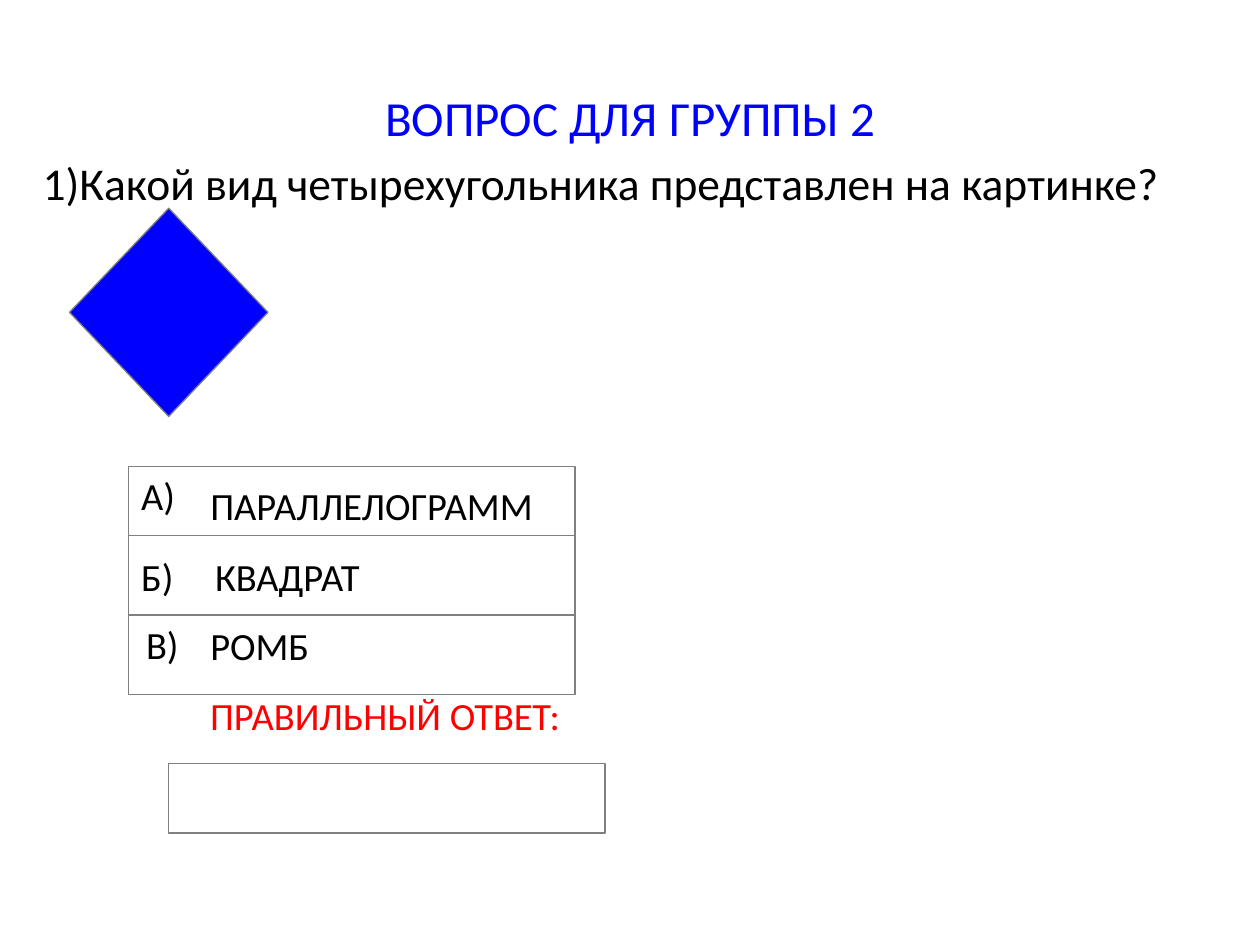
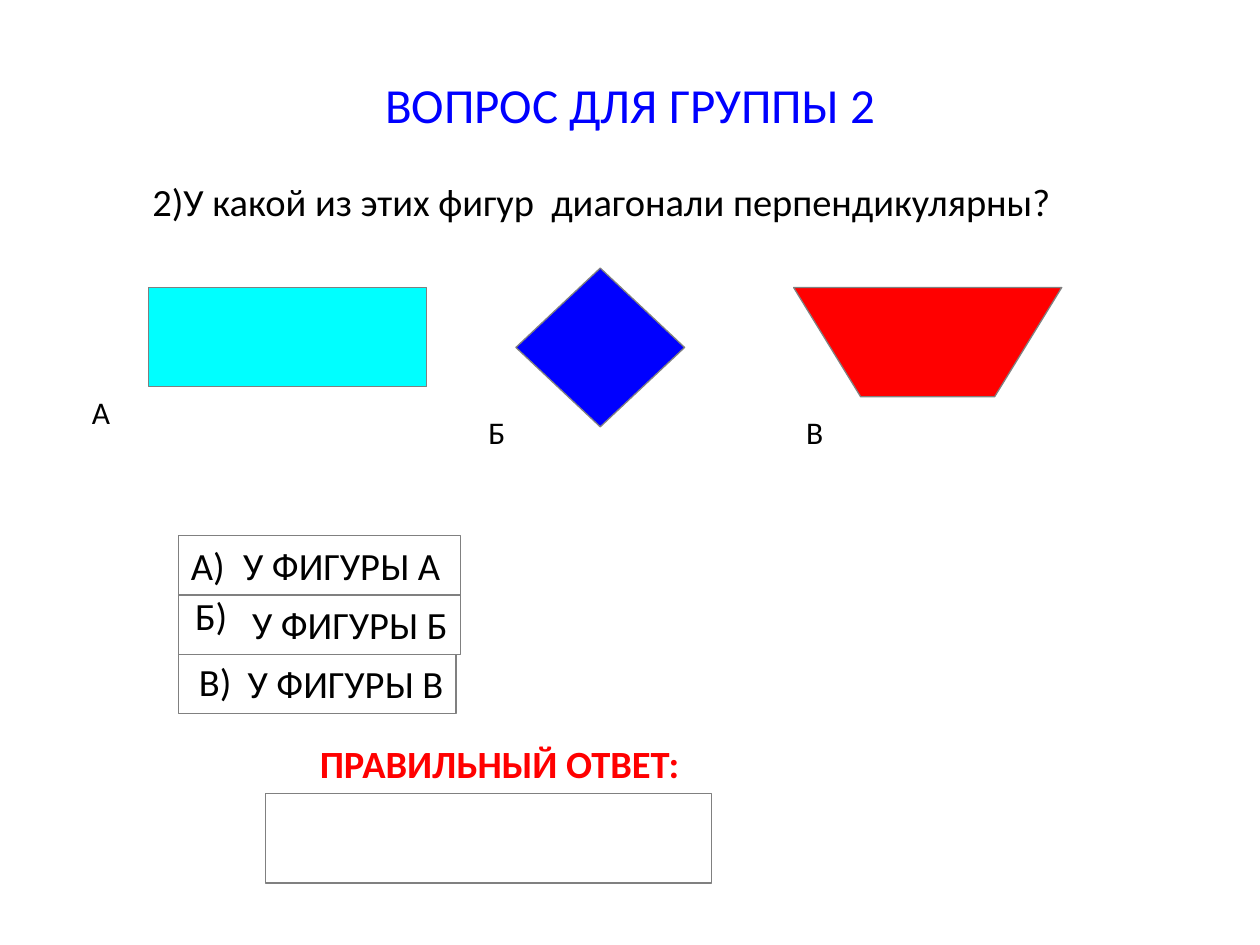
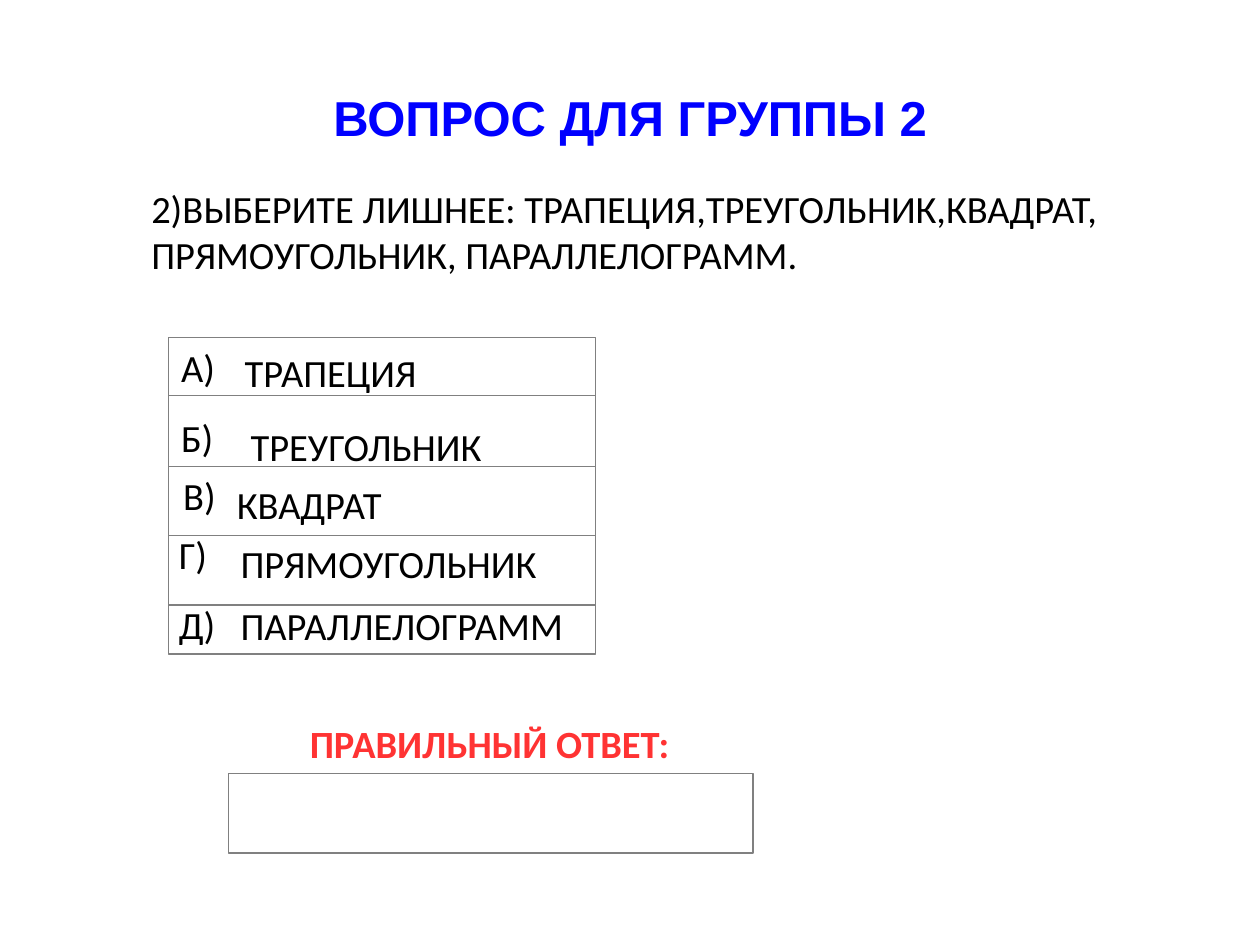
"""Build three quiz slides about quadrilaterals."""
from dataclasses import dataclass

from pptx import Presentation
from pptx.dml.color import RGBColor
from pptx.enum.shapes import MSO_SHAPE
from pptx.enum.text import MSO_ANCHOR, MSO_AUTO_SIZE, PP_ALIGN
from pptx.util import Pt

BLACK, BLUE, CYAN, RED, LIGHT_RED, GREY = (
    "000000", "0000FF", "00FFFF", "FF0000", "FF3333", "808080")
BODY_FONT = "Calibri"
HEADING = "ВОПРОС ДЛЯ ГРУППЫ 2"
ANSWER_CAPTION = "ПРАВИЛЬНЫЙ ОТВЕТ:"
LINE_HEIGHT = 34
LETTER_WIDTH = 38


@dataclass(frozen=True)
class Label:
    text: str
    left: float
    top: float
    width: float
    size: float = 22
    color: str = BLACK
    bold: bool = False
    height: float = LINE_HEIGHT


@dataclass(frozen=True)
class Figure:
    kind: MSO_SHAPE
    left: float
    top: float
    width: float
    height: float
    color: str | None = None


@dataclass(frozen=True)
class Option:
    letter: str
    answer: str
    height: float
    frame_width: float
    letter_offset: tuple[float, float]
    answer_offset: tuple[float, float]
    answer_width: float


@dataclass(frozen=True)
class Question:
    title_height: float
    labels: list[Label]
    figures: list[Figure]
    options_left: float
    options_top: float
    options: list[Option]
    title_font: str = BODY_FONT
    title_bold: bool = False
    trapezoid: Figure | None = None


QUESTIONS = [
    Question(
        title_height=90,
        labels=[
            Label("1)Какой вид четырехугольника представлен на картинке?",
                  17.3, 85, 669, size=26, height=38),
            Label(ANSWER_CAPTION, 113, 391.7, 266.4, color=RED),
        ],
        figures=[
            Figure(MSO_SHAPE.DIAMOND, 39.7, 119, 113.4, 119, BLUE),
            Figure(MSO_SHAPE.RECTANGLE, 96.4, 436.4, 249.4, 39.7),
        ],
        options_left=73.6, options_top=266.4,
        options=[
            Option("А)", "ПАРАЛЛЕЛОГРАММ", 39.6, 255, (0, 0), (39.5, 5.6), 206),
            Option("Б)", "КВАДРАТ", 45.4, 255, (0, 6.5), (42.2, 6.5), 104),
            Option("В)", "РОМБ", 45.4, 255, (2.8, 0), (39.5, 0.5), 76),
        ],
    ),
    Question(
        title_height=75,
        labels=[
            Label("2)У какой из этих фигур  диагонали перпендикулярны?",
                  80, 98, 529),
            Label("А", 45.4, 221, 26, size=18, height=29),
            Label("Б", 272, 232.5, 26, size=18, height=29),
            Label("В", 453.6, 232.5, 26, size=18, height=29),
            Label(ANSWER_CAPTION, 175.7, 419.5, 224, color=RED, bold=True),
        ],
        figures=[
            Figure(MSO_SHAPE.DIAMOND, 294.8, 153.2, 96.4, 90.7, BLUE),
            Figure(MSO_SHAPE.RECTANGLE, 85, 164.3, 158.8, 56.7, CYAN),
            Figure(MSO_SHAPE.RECTANGLE, 151.7, 453.6, 255, 51),
        ],
        trapezoid=Figure(MSO_SHAPE.TRAPEZOID, 453.5, 164.3, 153.2, 62.4, RED),
        options_left=102, options_top=306,
        options=[
            Option("А)", "У ФИГУРЫ А", 34, 161, (0, 0), (29.8, 0), 132),
            Option("Б)", "У ФИГУРЫ Б", 34, 161, (2.4, -5), (34.9, 0), 132),
            Option("В)", "У ФИГУРЫ В", 33.6, 158.6, (4.6, -1.8), (32.4, -0.4), 132),
        ],
    ),
    Question(
        title_height=90, title_font="Arial", title_bold=True,
        labels=[
            Label("2)ВЫБЕРИТЕ ЛИШНЕЕ: ТРАПЕЦИЯ,ТРЕУГОЛЬНИК,КВАДРАТ,\n"
                  "ПРЯМОУГОЛЬНИК, ПАРАЛЛЕЛОГРАММ.", 79.4, 102.2, 568, height=60),
            Label(ANSWER_CAPTION, 170, 408, 272, color=LIGHT_RED, bold=True),
        ],
        figures=[Figure(MSO_SHAPE.RECTANGLE, 130.4, 442, 300, 45.4)],
        options_left=96.4, options_top=193,
        options=[
            Option("А)", "ТРАПЕЦИЯ", 33.2, 244, (0, 0), (36.3, 3), 118),
            Option("Б)", "ТРЕУГОЛЬНИК", 40.3, 244, (0, 7), (39.8, 12), 152),
            Option("В)", "КВАДРАТ", 39.6, 244, (1.2, -0.2), (31.9, 5), 104),
            Option("Г)", "ПРЯМОУГОЛЬНИК", 39.6, 244, (-1.2, -6), (34, -1), 190),
            Option("Д)", "ПАРАЛЛЕЛОГРАММ", 28, 244, (-1.2, -5.8), (34, -5), 206),
        ],
    ),
]


def rgb(color: str) -> RGBColor:
    """Turn a hex string into a colour."""
    return RGBColor.from_string(color)


def style_font(font, name: str, size: float, color: str, bold: bool) -> None:
    """Apply face, size, colour and weight."""
    font.name = name
    font.size = Pt(size)
    font.bold = bold
    font.color.rgb = rgb(color)


def paint(shape, color: str | None) -> None:
    """Give a shape its fill and the shared hairline outline."""
    shape.shadow.inherit = False
    if color:
        shape.fill.solid()
        shape.fill.fore_color.rgb = rgb(color)
    else:
        shape.fill.background()
    shape.line.color.rgb = rgb(GREY)
    shape.line.width = Pt(0)


def draw_title(slide, question: Question) -> None:
    """Place and format the slide title."""
    title = slide.shapes.title
    title.left, title.top = Pt(36), Pt(21.6)
    title.width, title.height = Pt(648), Pt(question.title_height)
    title.text_frame.text = HEADING
    title.text_frame.vertical_anchor = MSO_ANCHOR.MIDDLE
    heading = title.text_frame.paragraphs[0]
    heading.alignment = PP_ALIGN.CENTER
    style_font(heading.font, question.title_font, 28, BLUE, question.title_bold)


def draw_label(slide, label: Label) -> None:
    """Draw one unwrapped text label."""
    frame = slide.shapes.add_textbox(
        Pt(label.left), Pt(label.top), Pt(label.width), Pt(label.height)).text_frame
    frame.word_wrap = False
    frame.auto_size = MSO_AUTO_SIZE.SHAPE_TO_FIT_TEXT
    frame.text = label.text
    for paragraph in frame.paragraphs:
        style_font(paragraph.font, BODY_FONT, label.size, label.color, label.bold)


def draw_figure(slide, figure: Figure) -> None:
    """Draw one preset figure."""
    paint(slide.shapes.add_shape(
        figure.kind, Pt(figure.left), Pt(figure.top),
        Pt(figure.width), Pt(figure.height)), figure.color)


def draw_trapezoid(slide, figure: Figure) -> None:
    """Draw a trapezoid whose short base, half the long one, is below."""
    right, bottom = figure.left + figure.width, figure.top + figure.height
    inset = figure.width / 4
    outline = slide.shapes.build_freeform(Pt(figure.left), Pt(figure.top))
    outline.add_line_segments([
        (Pt(right), Pt(figure.top)),
        (Pt(right - inset), Pt(bottom)),
        (Pt(figure.left + inset), Pt(bottom)),
    ], close=True)
    paint(outline.convert_to_shape(), figure.color)


def draw_options(slide, question: Question) -> None:
    """Stack the framed answer options."""
    left, top = question.options_left, question.options_top
    for option in question.options:
        draw_figure(slide, Figure(MSO_SHAPE.RECTANGLE, left, top,
                                  option.frame_width, option.height))
        for text, (dx, dy), width in (
            (option.letter, option.letter_offset, LETTER_WIDTH),
            (option.answer, option.answer_offset, option.answer_width),
        ):
            draw_label(slide, Label(text, left + dx, top + dy, width))
        top += option.height


def main() -> None:
    """Build and save the quiz."""
    quiz = Presentation()
    quiz.slide_width, quiz.slide_height = Pt(720), Pt(540)
    for question in QUESTIONS:
        slide = quiz.slides.add_slide(quiz.slide_layouts[5])
        draw_title(slide, question)
        for figure in question.figures:
            draw_figure(slide, figure)
        if question.trapezoid:
            draw_trapezoid(slide, question.trapezoid)
        for label in question.labels:
            draw_label(slide, label)
        draw_options(slide, question)
    quiz.save("out.pptx")


if __name__ == "__main__":
    main()
